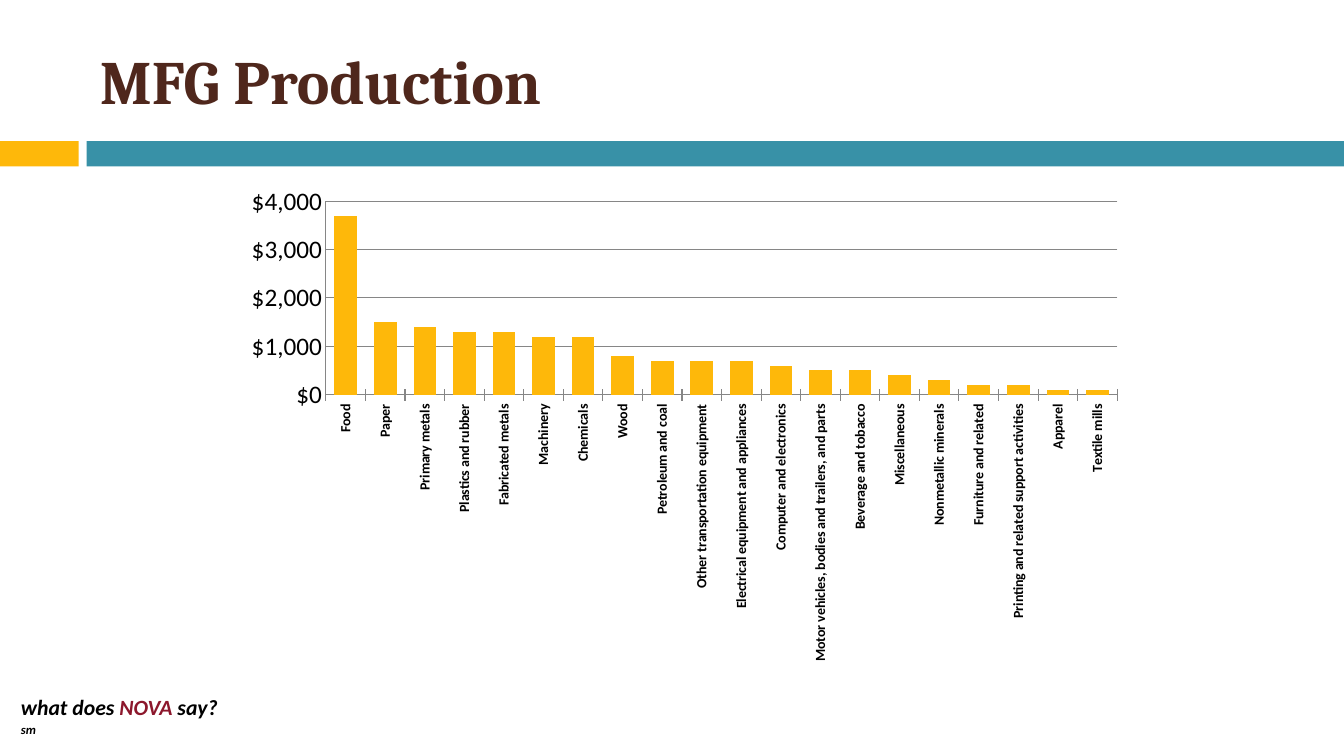
from lxml import etree
from pptx import Presentation
from pptx.chart.data import CategoryChartData
from pptx.dml.color import RGBColor
from pptx.enum.chart import XL_CHART_TYPE as ChartType, XL_TICK_MARK as TickMark
from pptx.enum.shapes import MSO_SHAPE as Shape
from pptx.enum.text import MSO_ANCHOR as Anchor, PP_ALIGN as Align
from pptx.oxml import parse_xml
from pptx.oxml.ns import nsdecls, qn
from pptx.util import Inches, Pt

COLORS = {
    "gold": "FEB80A",
    "teal": "3891A7",
    "brown": "4F271C",
    "crimson": "8C172C",
    "black": "000000",
    "gray": "868686",
}


def rgb(name):
    return RGBColor.from_string(COLORS[name])


deck = Presentation()
deck.slide_width, deck.slide_height = Inches(13.33), Inches(7.5)
slide = deck.slides.add_slide(deck.slide_layouts[5])

for left, width, color in [(0, 0.78, "gold"), (0.86, 12.47, "teal")]:
    band = slide.shapes.add_shape(
        Shape.RECTANGLE, Inches(left), Inches(1.4), Inches(width), Inches(0.25))
    band.shadow.inherit = False
    band.fill.solid()
    band.fill.fore_color.rgb = rgb(color)
    band.line.fill.background()

title = slide.shapes.title
title.left, title.top = Inches(0.89), Inches(0.25)
title.width, title.height = Inches(11.89), Inches(1.08)
title.text_frame.text = "MFG Production"
title.text_frame.vertical_anchor = Anchor.MIDDLE
heading = title.text_frame.paragraphs[0]
heading.alignment = Align.LEFT
heading.font.name, heading.font.size, heading.font.bold = "Cambria", Pt(44), True
heading.font.color.rgb = rgb("brown")

slogan_box = slide.shapes.add_textbox(
    Inches(0.11), Inches(6.83), Inches(2.33), Inches(0.36))
slogan_box.text_frame.word_wrap = False
slogan = slogan_box.text_frame.paragraphs[0]
for words, color in [("what does ", "black"), ("NOVA ", "crimson"),
                     ("say? ", "black"), ("sm", "black")]:
    part = slogan.add_run()
    part.text = words
    part.font.name, part.font.size = "Calibri", Pt(15.5)
    part.font.bold = part.font.italic = True
    part.font.color.rgb = rgb(color)
part.font._element.set("baseline", "30000")

production = [
    ("Food", 3700),
    ("Paper", 1500),
    ("Primary metals", 1400),
    ("Plastics and rubber", 1300),
    ("Fabricated metals", 1300),
    ("Machinery", 1200),
    ("Chemicals", 1200),
    ("Wood", 800),
    ("Petroleum and coal", 700),
    ("Other transportation equipment", 700),
    ("Electrical equipment and appliances", 700),
    ("Computer and electronics", 600),
    ("Motor vehicles, bodies and trailers, and parts", 500),
    ("Beverage and tobacco", 500),
    ("Miscellaneous", 400),
    ("Nonmetallic minerals", 300),
    ("Furniture and related", 200),
    ("Printing and related support activities", 200),
    ("Apparel", 100),
    ("Textile mills", 100),
]
industries, amounts = zip(*production)
chart_data = CategoryChartData()
chart_data.categories = industries
chart_data.add_series("Series 1", amounts)
chart = slide.shapes.add_chart(
    ChartType.COLUMN_CLUSTERED, Inches(2.34), Inches(1.75),
    Inches(8.92), Inches(4.92), chart_data).chart
chart.has_legend = False
chart.has_title = False
chart.font.name, chart.font.size = "Calibri", Pt(18)
chart.font.color.rgb = rgb("black")

plot = chart.plots[0]
plot.vary_by_categories = False
plot.gap_width, plot.overlap = 75, 40
bars = plot.series[0]
bars.format.fill.solid()
bars.format.fill.fore_color.rgb = rgb("gold")

industry_axis = chart.category_axis
industry_axis.major_tick_mark = TickMark.CROSS
labels = industry_axis.tick_labels
labels.font.name, labels.font.size, labels.font.bold = "Calibri", Pt(10), True
labels.font.color.rgb = rgb("black")
label_body = industry_axis._element.find(qn("c:txPr")).find(qn("a:bodyPr"))
label_body.set("rot", "-5400000")
label_body.set("vert", "horz")

dollar_axis = chart.value_axis
dollar_axis.minimum_scale, dollar_axis.maximum_scale = 0, 4000
dollar_axis.major_unit = 1000
dollar_axis.major_tick_mark = TickMark.NONE
dollar_axis.has_major_gridlines = True
dollar_axis.tick_labels.number_format = '"$"#,##0'
dollar_axis.tick_labels.number_format_is_linked = False
for rule in (industry_axis, dollar_axis, dollar_axis.major_gridlines):
    rule.format.line.color.rgb = rgb("gray")
    rule.format.line.width = Pt(0.75)

plot_area = chart._chartSpace.chart.plotArea
for automatic in plot_area.findall(qn("c:layout")):
    plot_area.remove(automatic)
layout = parse_xml(
    f'<c:layout {nsdecls("c")}><c:manualLayout><c:layoutTarget val="inner"/>'
    '<c:xMode val="edge"/><c:yMode val="edge"/></c:manualLayout></c:layout>')
for side, share in [("x", 0.1), ("y", 0.05), ("w", 0.88), ("h", 0.39)]:
    etree.SubElement(layout[0], qn(f"c:{side}")).set("val", str(share))
plot_area.insert(0, layout)

deck.save("out.pptx")
